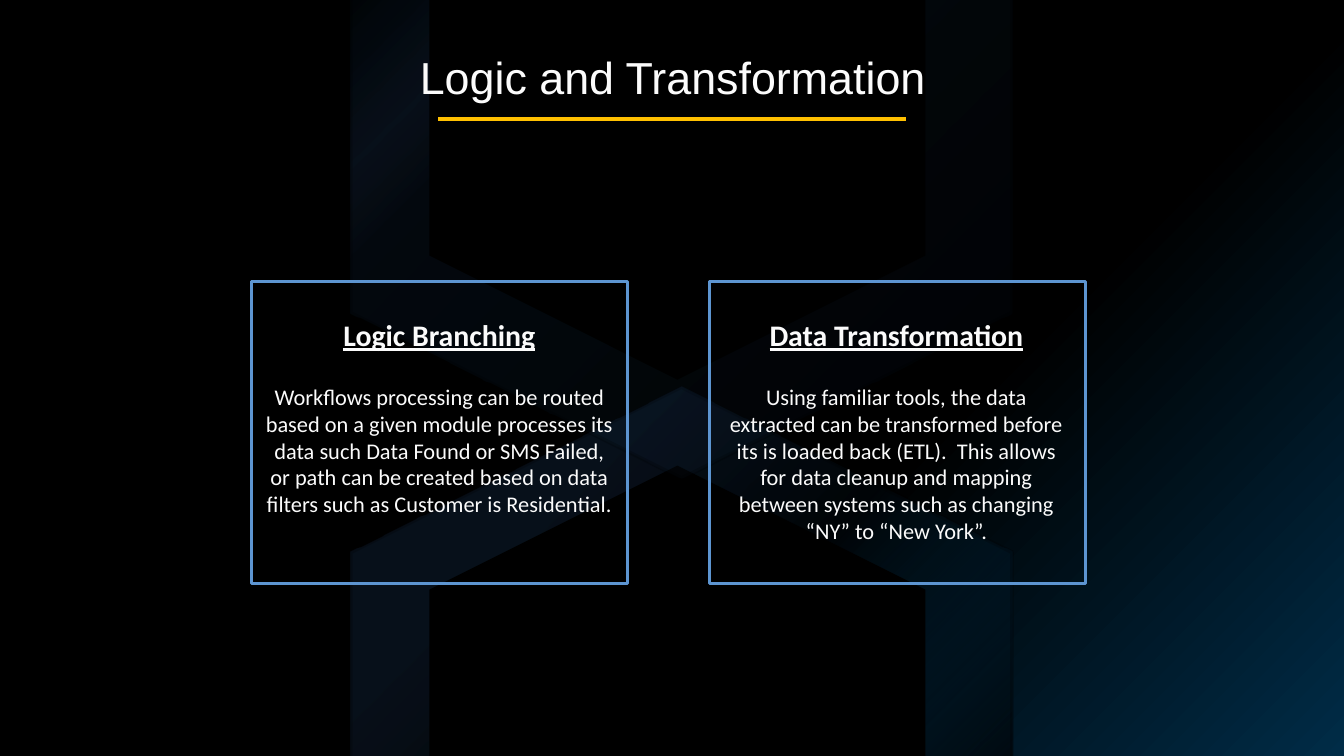
from lxml import etree
from pptx import Presentation
from pptx import util as u
from pptx.dml.color import RGBColor
from pptx.enum import shapes, text
from pptx.oxml.ns import qn

BLACK = RGBColor(0x00, 0x00, 0x00)
NAVY = RGBColor(0x00, 0x2C, 0x47)
DEEP_NAVY = RGBColor(0x00, 0x16, 0x24)
BRIGHT_BLUE = RGBColor(0x51, 0x9C, 0xFF)
MID_BLUE = RGBColor(0x29, 0x59, 0x92)
CARD_BLUE = RGBColor(0x5D, 0x95, 0xD1)
WHITE = RGBColor(0xFB, 0xFB, 0xFB)
GOLD = RGBColor(0xFF, 0xC0, 0x00)

deck = Presentation()
deck.slide_width = u.Inches(10)
deck.slide_height = deck.slide_width * 9 // 16
page = deck.slides.add_slide(deck.slide_layouts[6])
UNIT = deck.slide_width / 100  # square grid, 100 columns across


def grid(*cells):
    return [round(cell * UNIT) for cell in cells]


def paint_gradient(owner, fill, stops, angle):
    """Stops are (position %, colour, opacity %); the angle runs clockwise."""
    fill.gradient()
    fill.gradient_angle = 360 - angle
    stop_list = owner.element.find(".//" + qn("a:gsLst"))
    for old_stop in list(stop_list):
        stop_list.remove(old_stop)
    for position, color, opacity in stops:
        stop = etree.SubElement(stop_list, qn("a:gs"), pos=str(position * 1000))
        tint = etree.SubElement(stop, qn("a:srgbClr"), val=str(color))
        if opacity < 100:
            etree.SubElement(tint, qn("a:alpha"), val=str(opacity * 1000))


# Background
paint_gradient(page, page.background.fill, [(65, BLACK, 100), (100, NAVY, 100)], 45)

# Two hexagon rings, each a tinted hexagon with a black one inside
rings = [
    (55.2, [(24, BRIGHT_BLUE, 10), (46, NAVY, 10), (81, BLACK, 100), (82, DEEP_NAVY, 10)]),
    (9.2, [(17, NAVY, 10), (29, BRIGHT_BLUE, 10), (36, MID_BLUE, 10), (100, DEEP_NAVY, 10)]),
]
for middle, stops in rings:
    for center, width, height, rise in [(50.7, 52.8, 49.2, 0), (50.4, 39.6, 36.9, 0.75)]:
        hexagon = page.shapes.add_shape(
            shapes.MSO_SHAPE.HEXAGON,
            *grid(center - width / 2, middle - rise - height / 2, width, height))
        hexagon.rotation = 90
        hexagon.shadow.inherit = False
        if rise:
            hexagon.fill.solid()
            hexagon.fill.fore_color.rgb = BLACK
            hexagon.line.fill.background()
        else:
            paint_gradient(hexagon, hexagon.fill, stops, 315)
            hexagon.line.color.rgb = BLACK
            hexagon.line.width = u.Pt(2)
            edge = hexagon.element.spPr.find(qn("a:ln")).find(".//" + qn("a:srgbClr"))
            etree.SubElement(edge, qn("a:alpha"), val="20000")

# Cards
CARD_WIDTH = 28
cards = [
    (18.7, 28, "Logic Branching",
     "Workflows processing can be routed based on a given module processes its data "
     "such Data Found or SMS Failed, or path can be created based on data filters "
     "such as Customer is Residential."),
    (52.8, 27.8, "Data Transformation",
     "Using familiar tools, the data extracted can be transformed before its is "
     "loaded back (ETL).  This allows for data cleanup and mapping between systems "
     "such as changing “NY” to “New York”."),
]
TOP, MIDDLE = text.MSO_ANCHOR.TOP, text.MSO_ANCHOR.MIDDLE
labels = [((7.9, 3.9, 84.3, 3.6), "Logic and Transformation", "Arial", 24, False, MIDDLE)]
for left, text_width, heading, body in cards:
    card = page.shapes.add_shape(
        shapes.MSO_SHAPE.RECTANGLE, *grid(left, 20.95, CARD_WIDTH, 22.5))
    card.shadow.inherit = False
    card.fill.background()
    card.line.color.rgb = CARD_BLUE
    card.line.width = u.Pt(1.5)
    labels += [
        ((left, 27.5, text_width, 15), body, "Calibri", 12, False, TOP),
        ((left, 22.8, text_width, 4.2), heading, "Calibri", 16, True, MIDDLE),
    ]

# Title, card headings and card texts
for cells, wording, font_name, size, is_heading, anchor in labels:
    box = page.shapes.add_textbox(*grid(*cells))
    frame = box.text_frame
    frame.word_wrap = True
    frame.vertical_anchor = anchor
    frame.margin_left = frame.margin_right = u.Inches(0.1)
    frame.margin_top = frame.margin_bottom = u.Inches(0.1)
    para = frame.paragraphs[0]
    para.text = wording
    para.alignment = text.PP_ALIGN.CENTER
    para.font.name = font_name
    para.font.size = u.Pt(size)
    para.font.color.rgb = WHITE
    para.font.bold = para.font.underline = is_heading

# Rule under the title
rule = page.shapes.add_connector(
    shapes.MSO_CONNECTOR.STRAIGHT, *grid(32.6, 8.85, 67.4, 8.85))
rule.line.color.rgb = GOLD
rule.line.width = u.Pt(2)
etree.SubElement(rule.element.spPr, qn("a:effectLst"))

deck.save("out.pptx")
